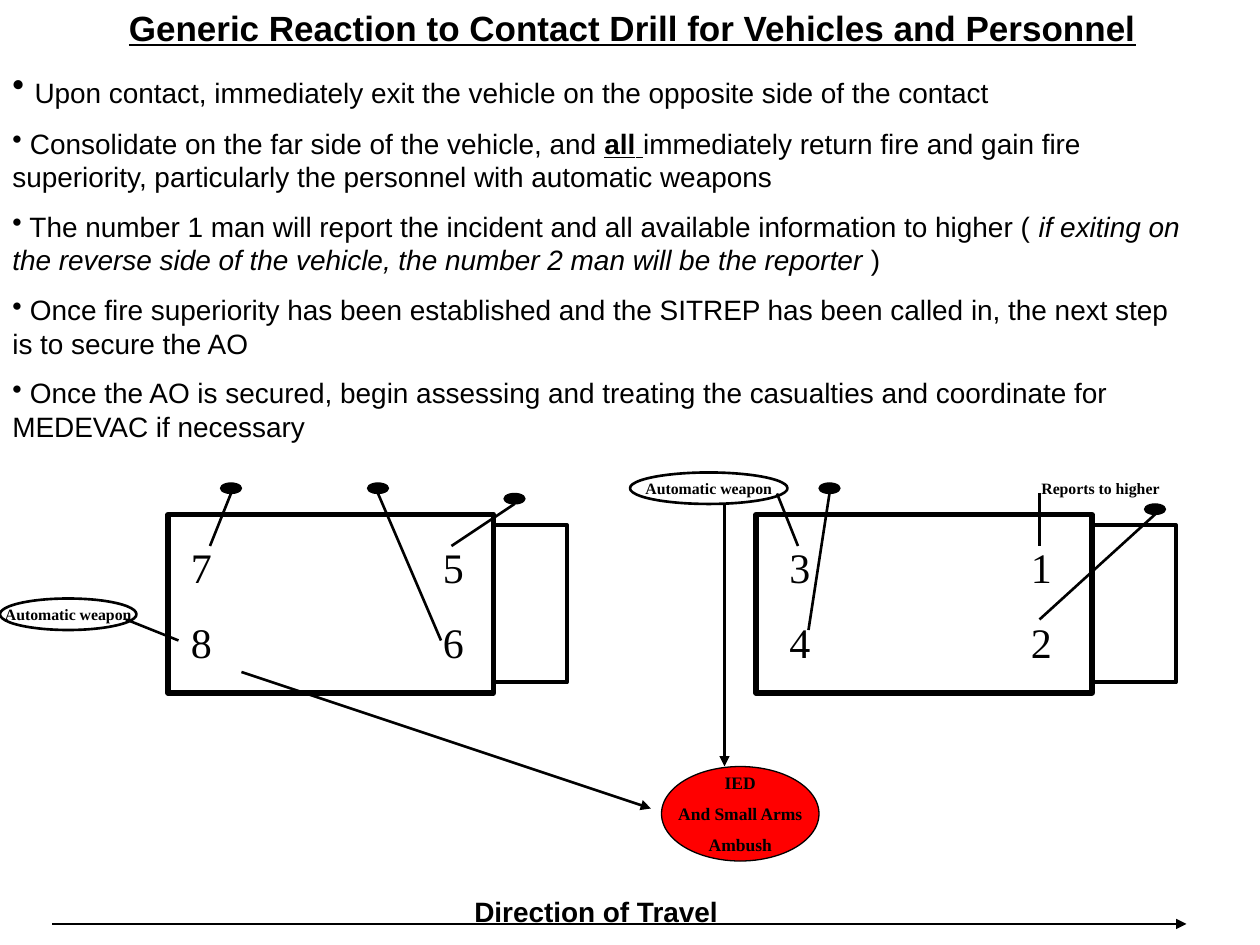
import pptx
import pptx.dml.color
import pptx.enum.shapes
import pptx.enum.text
import pptx.oxml
import pptx.oxml.ns
import pptx.util

SHAPE = pptx.enum.shapes.MSO_SHAPE
ALIGN = pptx.enum.text.PP_ALIGN
ANCHOR = pptx.enum.text.MSO_ANCHOR
BLACK, RED = "000000", "FF0000"
SANS, SERIF = "Arial", "Times New Roman"


def colour(text):
    return pptx.dml.color.RGBColor.from_string(text)


def grid(*cells):
    """Turn counts of grid cells into lengths; the slide is 120 by 90 cells."""
    return [pptx.util.Inches(cell / 12) for cell in cells]


def add_xml(parent, tag, **attributes):
    child = pptx.oxml.parse_xml(f"<a:{tag} {pptx.oxml.ns.nsdecls('a')}/>")
    for name, value in attributes.items():
        child.set(name, str(value))
    parent.append(child)


class Drill:
    """Drawing style and the slide being drawn."""

    def __init__(self, deck):
        self.page = deck.slides.add_slide(deck.slide_layouts[5])

    def fill_frame(self, frame, paragraphs, size, font=SERIF, bold=False,
                   align=ALIGN.LEFT, wrap=True, inset=True):
        """Each paragraph is a string or a list of (text, style) spans.

        A style holds any of the letters b, i and u, and L for the title size.
        """
        frame.word_wrap = wrap
        frame.auto_size = pptx.enum.text.MSO_AUTO_SIZE.NONE
        if not inset:
            frame.margin_left = frame.margin_right = 0
            frame.margin_top = frame.margin_bottom = 0
        for index, spans in enumerate(paragraphs):
            para = frame.add_paragraph() if index else frame.paragraphs[0]
            para.alignment = align
            # Half a line of space between paragraphs
            para.space_before = pptx.util.Pt(size * 0.575 if index else 0)
            para.font.name, para.font.bold = font, bold
            para.font.size = pptx.util.Pt(size)
            para.font.color.rgb = colour(BLACK)
            for text, style in [(spans, "")] if isinstance(spans, str) else spans:
                span = para.add_run()
                span.text = text
                if "b" in style:
                    span.font.bold = True
                if "i" in style:
                    span.font.italic = True
                if "u" in style:
                    span.font.underline = True
                if "L" in style:
                    span.font.size = pptx.util.Pt(20)

    def title(self, text, *place):
        box = self.page.shapes.title
        box.left, box.top, box.width, box.height = grid(*place)
        box.text_frame.vertical_anchor = ANCHOR.TOP
        self.fill_frame(box.text_frame, [[(text, "u")]], 20, SANS, True, ALIGN.CENTER)

    def text(self, paragraphs, place, size, **style):
        box = self.page.shapes.add_textbox(*grid(*place))
        self.fill_frame(box.text_frame, paragraphs, size, **style)
        return box.text_frame

    def bullets(self, paragraphs, place, size):
        for para in self.text(paragraphs, place, size, font=SANS).paragraphs:
            add_xml(para._p.get_or_add_pPr(), "buChar", char="•")

    def seats(self, first, others, place, gap):
        """Seats numbered from first, with the front seats gap columns further on."""
        for para in self.text(others, place, 24).paragraphs:
            properties = para._p.get_or_add_pPr()
            properties.set("marL", str(grid(gap)[0]))
            properties.set("indent", str(-grid(gap)[0]))
            add_xml(properties, "buAutoNum", type="arabicPlain", startAt=first)

    def shape(self, kind, place, width, fill=None, label=(), size=9):
        shape = self.page.shapes.add_shape(kind, *grid(*place))
        shape.shadow.inherit = False
        if fill:
            shape.fill.solid()
            shape.fill.fore_color.rgb = colour(fill)
        else:
            shape.fill.background()
        shape.line.color.rgb = colour(BLACK)
        shape.line.width = pptx.util.Pt(width)
        if label:
            shape.text_frame.vertical_anchor = ANCHOR.MIDDLE
            self.fill_frame(shape.text_frame, label, size, bold=True,
                            align=ALIGN.CENTER, wrap=False, inset=False)

    def line(self, *ends, arrow=False):
        line = self.page.shapes.add_connector(
            pptx.enum.shapes.MSO_CONNECTOR.STRAIGHT, *grid(*ends))
        line.line.color.rgb = colour(BLACK)
        line.line.width = pptx.util.Pt(1.5)
        if arrow:
            add_xml(line.line._get_or_add_ln(), "tailEnd", type="triangle")
        add_xml(line._element.spPr, "effectLst")

    def vehicle(self, column, hull, cab, first, others, seat_column, gap):
        self.shape(SHAPE.RECTANGLE, (column, 49, hull, 17), 3)
        self.shape(SHAPE.RECTANGLE, (column + hull, 50, cab, 15), 2.25)
        self.seats(first, others, (seat_column, 51, 29, 13), gap)


STEPS = [
    [(" ", "L"),
     ("Upon contact, immediately exit the vehicle on the opposite side of the contact", "")],
    [(" Consolidate on the far side of the vehicle, and ", ""), ("all", "bu"), (" ", "u"),
     ("immediately return fire and gain fire superiority, particularly the personnel "
      "with automatic weapons", "")],
    [(" The number 1 man will report the incident and all available information to "
      "higher ( ", ""),
     ("if exiting on the reverse side of the vehicle, the number 2 man will be the "
      "reporter ", "i"), (")", "")],
    " Once fire superiority has been established and the SITREP has been called in, "
    "the next step is to secure the AO",
    " Once the AO is secured, begin assessing and treating the casualties and "
    "coordinate for MEDEVAC if necessary",
]
MOVES = [(43, 52, 49, 48), (42, 61, 36, 47), (20, 52, 22, 47), (17, 61, 12, 59),
         (99, 52, 99, 47), (99, 59, 110, 49), (76, 52, 74, 47), (77, 60, 79, 47)]
ARROWS = [(23, 64, 62, 77), (69, 48, 69, 73), (5, 88, 113, 88)]
POSITIONS = [(21, 46), (35, 46), (48, 47), (78, 46), (109, 48)]
GUNNERS = [(60, 45, 15, 3), (0, 57, 13, 3)]


def main():
    deck = pptx.Presentation()
    deck.slide_width, deck.slide_height = grid(120, 90)
    drill = Drill(deck)
    drill.title("Generic Reaction to Contact Drill for Vehicles and Personnel",
                0, 0, 120.5, 5)
    drill.bullets(STEPS, (0, 5.9, 114, 42), 16)
    drill.vehicle(16, 31, 7, 7, ["5", "6"], 17, 24)
    drill.vehicle(72, 32, 8, 3, ["1", "2"], 74, 23)
    drill.shape(SHAPE.OVAL, (63, 73, 15, 9), 0.75, RED,
                ["IED", "And Small Arms", "Ambush"], 10)
    for move in MOVES:
        drill.line(*move)
    for arrow in ARROWS:
        drill.line(*arrow, arrow=True)
    for position in POSITIONS:
        drill.shape(SHAPE.OVAL, (*position, 2, 1), 0.75, BLACK)
    for gunner in GUNNERS:
        drill.shape(SHAPE.OVAL, gunner, 1.5, label=["Automatic weapon"])
    drill.text(["Reports to higher"], (98, 45, 22, 3), 9, bold=True)
    drill.text(["Direction of Travel"], (44, 84.6, 37, 4.4), 16, font=SANS, bold=True)
    deck.save("out.pptx")


if __name__ == "__main__":
    main()
